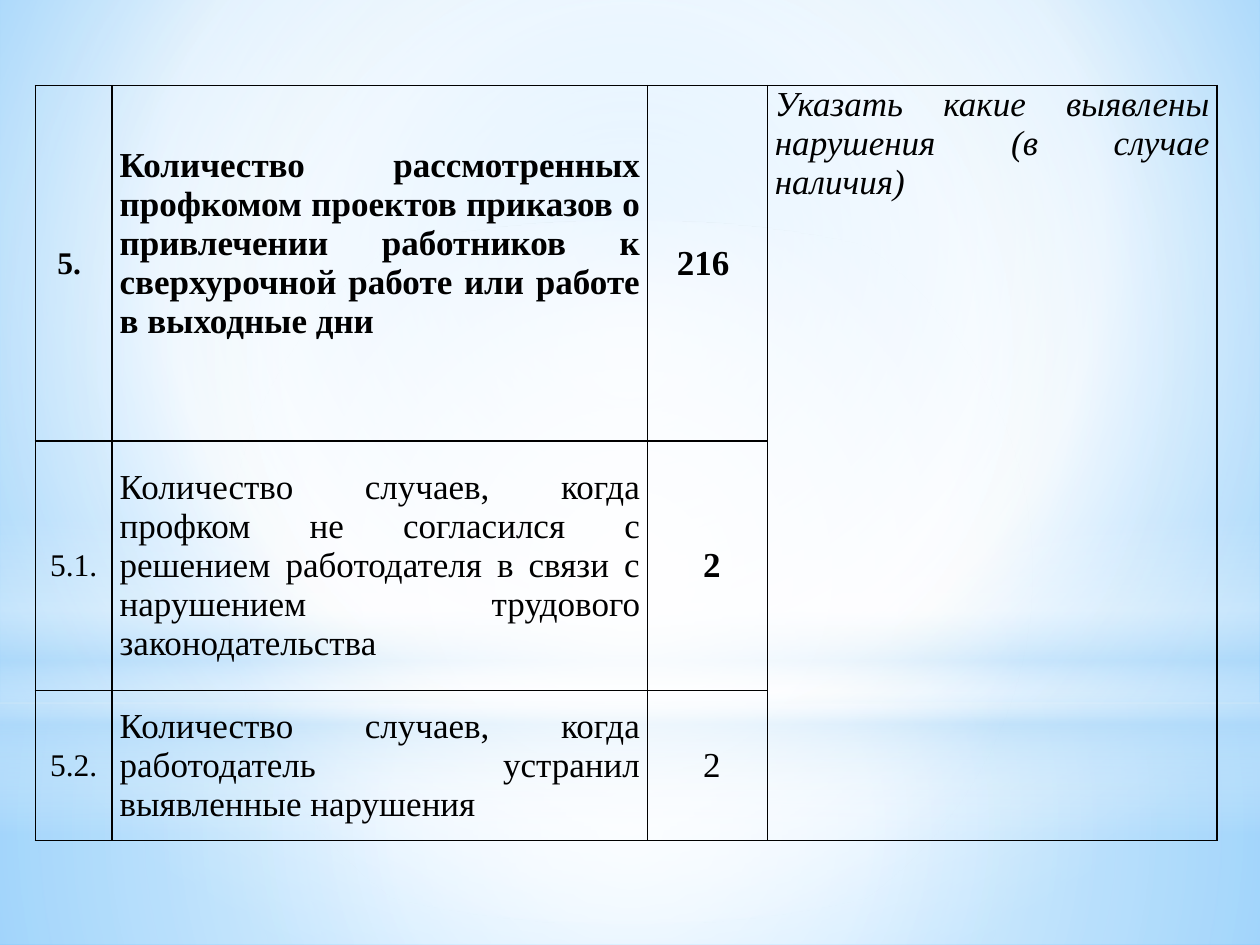
from dataclasses import dataclass

from lxml import etree
from pptx import Presentation
from pptx import util as u
from pptx.dml.color import RGBColor
from pptx.enum import shapes, text
from pptx.oxml import ns


@dataclass(frozen=True)
class Theme:
    font: str = "Times New Roman"
    ink: str = "000000"
    white: str = "FFFFFF"
    haze: str = "B4DCFA"
    sky: str = "9ED5FF"
    deep: str = "5BB9FF"
    number_size: int = 18
    body_size: int = 20
    border: float = 1


THEME = Theme()
CENTER, JUSTIFY = text.PP_ALIGN.CENTER, text.PP_ALIGN.JUSTIFY
SIDE = 0.06
MIDDLE = (50, 50, 50, 50)


def add_node(parent, tag, **attributes):
    return etree.SubElement(parent, ns.qn(tag), attributes)


def set_gradient(fill, stops, focus=None):
    fill.gradient()
    gradient = fill._fill._gradFill
    for child in list(gradient):
        gradient.remove(child)
    stop_list = add_node(gradient, "a:gsLst")
    for position, color, opacity in stops:
        stop = add_node(stop_list, "a:gs", pos=str(position * 1000))
        shade = add_node(stop, "a:srgbClr", val=color)
        if opacity < 100:
            add_node(shade, "a:alpha", val=str(opacity * 1000))
    if focus:
        circle = add_node(gradient, "a:path", **{"path": "circle"})
        edges = {edge: str(value * 1000) for edge, value in zip("ltrb", focus)}
        add_node(circle, "a:fillToRect", **edges)
    else:
        add_node(gradient, "a:lin", ang="5400000", scaled="0")


def add_backdrop(slide, box):
    white, haze = THEME.white, THEME.haze
    set_gradient(
        slide.background.fill,
        [(0, THEME.sky, 100), (60, white, 100), (100, THEME.deep, 100)],
        (20, 10, 20, 60),
    )
    rectangle, oval = shapes.MSO_SHAPE.RECTANGLE, shapes.MSO_SHAPE.OVAL
    left, top, width, height = box
    horizon = 5.58
    layers = [
        (rectangle, horizon, height - horizon,
         [(0, white, 91), (37, white, 76), (100, haze, 79)], MIDDLE),
        (rectangle, 0, horizon,
         [(0, white, 89), (48, white, 62), (100, haze, 79)], MIDDLE),
        (rectangle, 4.12, 2.5,
         [(0, white, 0), (29, white, 30), (45, haze, 40),
          (55, white, 26), (65, haze, 60), (100, white, 0)], None),
        (oval, 1.75, horizon, [(0, white, 100), (56, white, 0)], MIDDLE),
    ]
    for kind, offset, depth, stops, focus in layers:
        shape = slide.shapes.add_shape(
            kind, u.Inches(left), u.Inches(top + offset),
            u.Inches(width), u.Inches(depth))
        shape.shadow.inherit = False
        shape.line.fill.background()
        set_gradient(shape.fill, stops, focus)


def set_borders(cell):
    properties = cell._tc.get_or_add_tcPr()
    for index, side in enumerate(("a:lnL", "a:lnR", "a:lnT", "a:lnB")):
        line = etree.Element(ns.qn(side), w=str(u.Pt(THEME.border)))
        add_node(add_node(line, "a:solidFill"), "a:srgbClr", val=THEME.ink)
        properties.insert(index, line)


def fill_cell(cell, wording, alignment, size, bold=False, italic=False,
              anchor=text.MSO_ANCHOR.MIDDLE, **extra_margins):
    margins = {"left": SIDE, "right": SIDE, "top": 0, "bottom": 0}
    margins.update(extra_margins)
    for side, value in margins.items():
        setattr(cell, f"margin_{side}", u.Inches(value))
    cell.vertical_anchor = anchor
    paragraph = cell.text_frame.paragraphs[0]
    paragraph.alignment = alignment
    run = paragraph.add_run()
    run.text = wording
    formats = {"name": THEME.font, "size": u.Pt(size), "bold": bold, "italic": italic}
    for name, value in formats.items():
        setattr(run.font, name, value)
    run.font.color.rgb = RGBColor.from_string(THEME.ink)


def add_report_table(slide, box):
    columns, rows = (0.61, 4.25, 0.95, 3.57), (2.82, 1.98, 1.19)
    frame = slide.shapes.add_table(
        len(rows), len(columns), *(u.Inches(value) for value in box))
    table = frame.table
    table.first_row = table.horz_banding = False
    for column, width in zip(table.columns, columns):
        column.width = u.Inches(width)
    for row, height in zip(table.rows, rows):
        row.height = u.Inches(height)
    for cell in table.iter_cells():
        cell.fill.background()
        set_borders(cell)

    nudge = SIDE + 0.07
    entries = [
        ("5.", "Количество рассмотренных профкомом проектов приказов о "
         "привлечении работников к сверхурочной работе или работе в выходные дни",
         "216", True, True, {"right": nudge}, {"bottom": 0.31}),
        ("5.1.", "Количество случаев, когда профком не согласился с решением "
         "работодателя в связи с нарушением трудового законодательства",
         "2", False, True, {"left": nudge}, {}),
        ("5.2.", "Количество случаев, когда работодатель устранил "
         "выявленные нарушения",
         "2", False, False, {"left": nudge}, {}),
    ]
    for index, entry in enumerate(entries):
        number, wording, count, bold, bold_count, count_margin, wording_margin = entry
        number_margin = {"right": nudge} if bold else {}
        fill_cell(table.cell(index, 0), number, CENTER, THEME.number_size,
                  bold, **number_margin)
        fill_cell(table.cell(index, 1), wording, JUSTIFY, THEME.body_size,
                  bold, **wording_margin)
        fill_cell(table.cell(index, 2), count, CENTER, THEME.body_size,
                  bold_count, **count_margin)

    remark = table.cell(0, 3)
    remark.merge(table.cell(len(rows) - 1, 3))
    fill_cell(remark, "Указать какие выявлены нарушения (в случае наличия)",
              JUSTIFY, THEME.body_size, italic=True, anchor=text.MSO_ANCHOR.TOP)


def main():
    presentation = Presentation()
    presentation.slide_width, presentation.slide_height = u.Inches(10), u.Inches(7.5)
    slide = presentation.slides.add_slide(presentation.slide_layouts[6])
    add_backdrop(slide, (0, 0, 10, 7.5))
    add_report_table(slide, (0.28, 0.68, 9.37, 5.98))
    presentation.save("out.pptx")


if __name__ == "__main__":
    main()
